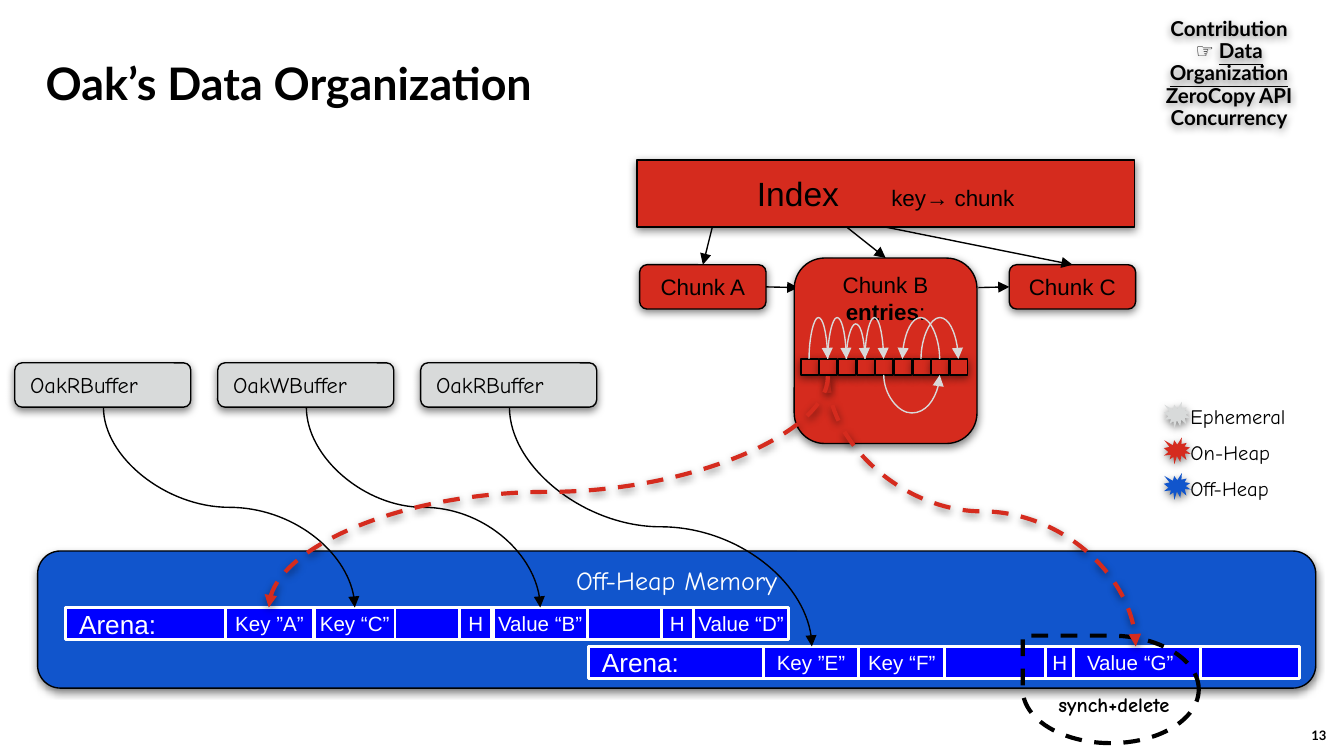
"""Build the Oak data organization slide."""
from dataclasses import dataclass

from lxml.etree import SubElement
from pptx import Presentation
from pptx.dml.color import RGBColor
from pptx.enum.dml import MSO_LINE
from pptx.enum.shapes import MSO_CONNECTOR as Link, MSO_SHAPE as Kind
from pptx.enum.text import MSO_ANCHOR as Anchor, MSO_AUTO_SIZE, PP_ALIGN as Align
from pptx.oxml.ns import qn
from pptx.util import Inches, Pt

COLORS = {"black": "000000", "white": "FFFFFF", "ephemeral": "D8DADA", "on_heap": "D52B1E",
          "off_heap": "1155CC", "cell": "0000FF", "arc": "D9D9D9"}
FLAT_DEPTH = 0.001


@dataclass
class Words:
    text: str
    size: float
    font: str = "Arial"
    color: str = "black"
    bold: bool = False
    underline: bool = False


@dataclass
class Cell:
    text: str
    left: float
    width: float
    size: float = 11
    inset: float = 0
    align: Align = Align.CENTER


@dataclass
class Arena:
    top: float
    cells: list[Cell]


@dataclass
class Curve:
    start: tuple[float, float]
    end: tuple[float, float]
    color: str = "black"
    bulge: float = 0
    dashed: bool = False


def rgb(name: str) -> RGBColor:
    return RGBColor.from_string(COLORS[name])


def cast_shadow(properties) -> None:
    effects = properties.find(qn("a:effectLst"))
    shadow = SubElement(effects, qn("a:outerShdw"), blurRad=str(Pt(4.5)), dist=str(Pt(1.5)),
                        dir="5400000", algn="ctr", rotWithShape="0")
    color = SubElement(shadow, qn("a:srgbClr"), val=COLORS["black"])
    SubElement(color, qn("a:alpha"), val="50000")


def write(shape, lines: list[list[Words]], align=Align.LEFT, anchor=Anchor.MIDDLE,
          insets=(0.1, 0.1, 0.1, 0.1), spacing=None) -> None:
    frame = shape.text_frame
    frame.word_wrap = True
    frame.auto_size = MSO_AUTO_SIZE.NONE
    frame.vertical_anchor = anchor
    frame.margin_left, frame.margin_top, frame.margin_right, frame.margin_bottom = map(Inches, insets)
    for number, line in enumerate(lines):
        para = frame.add_paragraph() if number else frame.paragraphs[0]
        para.alignment = align
        if spacing:
            para.line_spacing = spacing
        for words in line:
            span = para.add_run()
            span.text = words.text
            span.font.size = Pt(words.size)
            span.font.name = words.font
            span.font.bold = words.bold
            span.font.underline = words.underline
            span.font.color.rgb = rgb(words.color)


def add_box(slide, kind, place, fill=None, line="black", weight=0.75, shadow=True):
    box = slide.shapes.add_shape(kind, *map(Inches, place))
    box.shadow.inherit = False
    if shadow:
        cast_shadow(box._element.spPr)
    if fill:
        box.fill.solid()
        box.fill.fore_color.rgb = rgb(fill)
    else:
        box.fill.background()
    if line:
        box.line.color.rgb = rgb(line)
        box.line.width = Pt(weight)
    else:
        box.line.fill.background()
    return box


def add_label(slide, place, lines, **layout):
    label = slide.shapes.add_textbox(*map(Inches, place))
    write(label, lines, **layout)
    return label


def style_arrow(arrow, color="black", dashed=False) -> None:
    arrow.line.color.rgb = rgb(color)
    arrow.line.width = Pt(2.25 if dashed else 0.75)
    if dashed:
        arrow.line.dash_style = MSO_LINE.DASH
    properties = arrow._element.spPr
    SubElement(properties.find(qn("a:ln")), qn("a:tailEnd"), type="triangle")
    SubElement(properties, qn("a:effectLst"))
    if dashed:
        cast_shadow(properties)


def add_arrow(slide, start, end):
    arrow = slide.shapes.add_connector(Link.STRAIGHT, *map(Inches, (*start, *end)))
    style_arrow(arrow)
    return arrow


def add_curve(slide, curve: Curve) -> None:
    (x1, y1), (x2, y2) = curve.start, curve.end
    depth, span = max(y2 - y1, FLAT_DEPTH), abs(x2 - x1)
    left, top = (x1 + x2 - depth) / 2, (y1 + y2 - span) / 2
    arrow = slide.shapes.add_connector(
        Link.CURVE, *map(Inches, (left, top, left + depth, top + span)))
    frame = arrow._element.spPr.find(qn("a:xfrm"))
    frame.set("rot", "16200000" if x2 > x1 else "5400000")
    if x2 > x1:
        frame.set("flipH", "1")
    bend = curve.bulge / depth if curve.bulge else 0.5
    guides = arrow._element.spPr.find(qn("a:prstGeom")).get_or_add_avLst()
    SubElement(guides, qn("a:gd"), name="adj1", fmla=f"val {round(bend * 100000)}")
    style_arrow(arrow, curve.color, curve.dashed)


def add_arena(slide, arena: Arena) -> None:
    for cell in arena.cells:
        box = add_box(slide, Kind.RECTANGLE, (cell.left, arena.top, cell.width, 0.24), "cell",
                      "white", 1.5, shadow=False)
        write(box, [[Words(cell.text, cell.size, color="white")]], cell.align,
              insets=(cell.inset, 0.1, cell.inset, 0.1))


def main() -> None:
    deck = Presentation()
    deck.slide_width = Inches(10)
    deck.slide_height = deck.slide_width * 9 // 16
    slide = deck.slides.add_slide(deck.slide_layouts[5])

    title = slide.shapes.title
    title.left, title.top, title.width, title.height = map(Inches, (0.34, 0.49, 9.32, 0.63))
    write(title, [[Words("Oak’s Data Organization", 24, "Lato", bold=True)]],
          anchor=Anchor.TOP, insets=(0, 0, 0, 0), spacing=0.8)

    memory = add_box(slide, Kind.ROUNDED_RECTANGLE, (0.28, 4.1, 9.51, 1.02), "off_heap")
    write(memory, [[Words("Off-Heap Memory", 14, "Comic Neue", "white")]], Align.CENTER,
          insets=(0.1, 0.1, 0.1, 0.69))

    for arena in (
        Arena(4.81, [Cell("Arena:", 4.38, 5.29, 14, 0.1, Align.LEFT), Cell("Key ”E”", 5.68, 0.71),
                     Cell("Value “G”", 7.99, 0.94, 11, 0.1, Align.LEFT),
                     Cell("Key “F”", 6.39, 0.64), Cell("H", 7.78, 0.21)]),
        Arena(4.52, [Cell("Arena:", 0.49, 5.29, 14, 0.1, Align.LEFT), Cell("Key ”A”", 1.68, 0.65),
                     Cell("Value “B”", 3.67, 0.7), Cell("Key “C”", 2.34, 0.6),
                     Cell("Value “D”", 5.16, 0.71), Cell("H", 3.42, 0.24), Cell("H", 4.92, 0.24)]),
    ):
        add_arena(slide, arena)

    index = add_box(slide, Kind.RECTANGLE, (4.74, 1.19, 3.7, 0.5), "on_heap")
    write(index, [[Words("Index", 18), Words(" \t", 14), Words("key→ chunk", 12)]], Align.CENTER)

    chunks = []
    for name, left in (("Chunk A", 4.76), ("Chunk C", 7.51)):
        chunk = add_box(slide, Kind.ROUNDED_RECTANGLE, (left, 1.97, 0.94, 0.33), "on_heap")
        write(chunk, [[Words(name, 12)]], Align.CENTER)
        chunks.append(chunk)
    chunk_a, chunk_c = chunks
    add_arrow(slide, (5.3, 1.69), (5.23, 1.97)).end_connect(chunk_a, 0)
    add_arrow(slide, (6.59, 1.69), (7.98, 1.97)).end_connect(chunk_c, 0)
    index_to_b = add_arrow(slide, (6.3, 1.69), (6.59, 1.92))
    add_arrow(slide, (5.7, 2.14), (5.94, 2.14)).begin_connect(chunk_a, 3)
    add_arrow(slide, (7.28, 2.14), (7.51, 2.14)).end_connect(chunk_c, 1)

    for name, left, target in (("OakRBuffer", 0.11, (2.64, 4.52)),
                               ("OakWBuffer", 1.62, (4.02, 4.52)),
                               ("OakRBuffer", 3.13, (6.04, 4.81))):
        buffer = add_box(slide, Kind.ROUNDED_RECTANGLE, (left, 2.7, 1.31, 0.33), "ephemeral")
        write(buffer, [[Words(name, 12, "Comic Neue")]])
        add_curve(slide, Curve((left + 0.66, 3.03), target))

    for row, (name, color) in enumerate((("Ephemeral", "ephemeral"), ("On-Heap", "on_heap"),
                                         ("Off-Heap", "off_heap"))):
        top = 2.99 + 0.265 * row
        add_box(slide, Kind.EXPLOSION1, (8.66, top, 0.2, 0.2), color, line=None)
        add_label(slide, (8.76, top - 0.08, 1.03, 0.36), [[Words(name, 11, "Comic Neue")]],
                  anchor=Anchor.TOP)

    add_label(slide, (9.27, 5.1, 0.6, 0.43), [[Words("13", 7, "Lato", bold=True)]],
              align=Align.RIGHT, anchor=Anchor.BOTTOM, insets=(0, 0, 0, 0))
    agenda = add_label(
        slide, (8.39, 0.04, 1.51, 0.86),
        [[Words(text, 11, "Lato", bold=True, underline=text == "Data Organization") for text in line]
         for line in (["Contribution"], ["☞ ", "Data Organization"], ["ZeroCopy API"], ["Concurrency"])],
        align=Align.CENTER, anchor=Anchor.TOP, spacing=0.9)
    agenda.shadow.inherit = False
    cast_shadow(agenda._element.spPr)

    drop = add_box(slide, Kind.TEAR, (7.61, 4.73, 1.31, 0.8), weight=2.25, shadow=False)
    drop.line.dash_style = MSO_LINE.DASH
    drop._element.spPr.find(qn("a:xfrm")).set("flipH", "1")
    add_label(slide, (7.69, 5.05, 1.69, 0.37), [[Words("synch+delete", 11, "Comic Neue", bold=True)]],
              align=Align.CENTER, anchor=Anchor.TOP, insets=(0.1, 0.1, 0.59, 0.1))

    chunk_b = add_box(slide, Kind.ROUNDED_RECTANGLE, (5.91, 1.92, 1.36, 1.38), "on_heap")
    write(chunk_b, [[Words("Chunk B", 12)], [Words("entries", 12, bold=True), Words(":", 12)]],
          Align.CENTER, Anchor.TOP, (0.1, 0.03, 0.1, 0.1))
    index_to_b.end_connect(chunk_b, 0)

    lefts = [5.96 + 1.11 * number / 8 for number in range(9)]
    for left in lefts:
        add_box(slide, Kind.RECTANGLE, (left, 2.67, 0.13, 0.12), "on_heap")
    centers = [left + 0.06 for left in lefts]
    for source, target, bulge in ((0, 1, -0.26), (1, 2, -0.26), (2, 3, -0.22), (3, 4, -0.26),
                                  (7, 5, -0.26), (6, 8, -0.26)):
        add_curve(slide, Curve((centers[source], 2.67), (centers[target], 2.67), "arc", bulge))
    add_curve(slide, Curve((centers[4], 2.79), (centers[7], 2.79), "arc", 0.24))
    for target in ((8.45, 4.81), (2, 4.52)):
        add_curve(slide, Curve((6.16, 2.8), target, "on_heap", dashed=True))

    deck.save("out.pptx")


if __name__ == "__main__":
    main()
